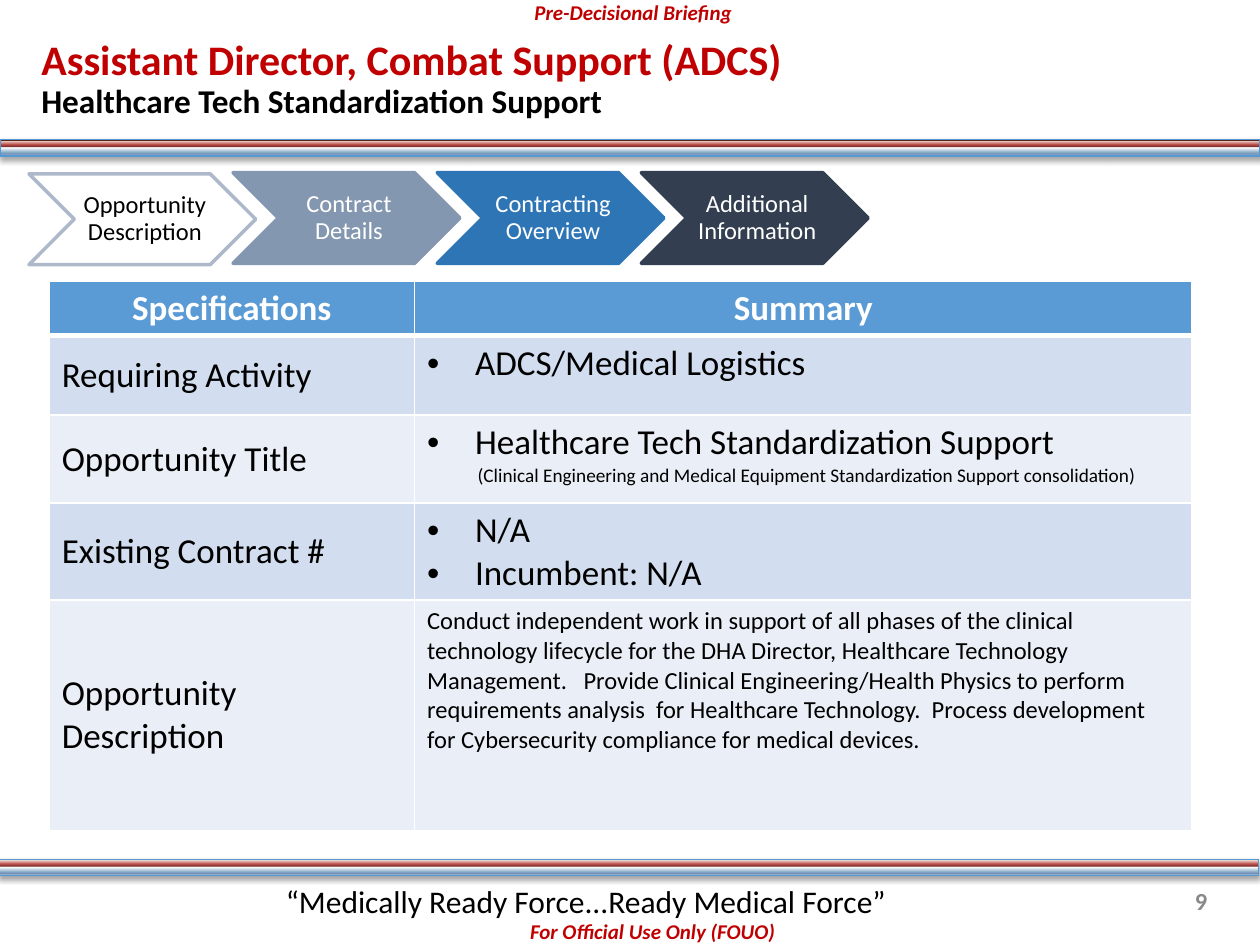
from dataclasses import dataclass
from lxml.etree import SubElement as Sub
from pptx import Presentation
from pptx.dml.color import RGBColor as Rgb
from pptx.enum.shapes import MSO_SHAPE as Shape
from pptx.enum.text import MSO_ANCHOR as Anchor, MSO_AUTO_SIZE as Fit, PP_ALIGN as Align
from pptx.oxml import parse_xml
from pptx.oxml.ns import nsdecls, qn
from pptx.util import Inches, Pt


@dataclass(frozen=True)
class Theme:
    font: str = "Calibri"
    red: str = "C00000"
    black: str = "000000"
    white: str = "FFFFFF"
    gray: str = "898989"
    edge: str = "5698D3"
    head: str = "5B9BD5"
    bands: tuple = ("D2DEEF", "EAEFF7")
    title: int = 24
    sub: int = 19
    cell: int = 20
    motto: int = 18
    body: int = 14
    mark: int = 12
    note: int = 11


T = Theme()


def write(para, text, size, color, bold=False, italic=False):
    run = para.add_run()
    run.text = text
    font = run.font
    font.name, font.size, font.bold, font.italic = T.font, Pt(size), bold, italic
    font.color.rgb = Rgb.from_string(color)


def add_box(shapes, x, y, w, h, align=Align.LEFT, anchor=Anchor.TOP, pads=None):
    """Add a wrapping text box; return its first paragraph and its frame."""
    frame = shapes.add_textbox(Inches(x), Inches(y), Inches(w), Inches(h)).text_frame
    frame.word_wrap = True
    frame.vertical_anchor = anchor
    if pads:
        (frame.margin_left, frame.margin_top,
         frame.margin_right, frame.margin_bottom) = map(Inches, pads)
    para = frame.paragraphs[0]
    para.alignment = align
    return para, frame


deck = Presentation()
deck.slide_width, deck.slide_height = Inches(10), Inches(7.5)
slide = deck.slides.add_slide(deck.slide_layouts[6])
shapes = slide.shapes

# Striped bars
stops = [(0, "DCEBF5"), (8, "83A7C3"), (13, "768FB9"), (21, "83A7C3"), (52, "FFFFFF"),
         (56, "9C6563"), (58, "80302D"), (71, "C0524E"), (94, "EBDAD4"), (100, "55261C")]
marks = "".join(f'<a:gs pos="{pos * 1000}"><a:srgbClr val="{color}"/></a:gs>'
                for pos, color in stops)
for x, y in [(0, 1.11), (-0.01, 6.82)]:
    bar = shapes.add_shape(Shape.RECTANGLE, Inches(x), Inches(y), Inches(10), Inches(0.13))
    bar.line.color.rgb = Rgb.from_string(T.edge)
    bar.line.width = Pt(0.75)
    props = bar._element.spPr
    props.find(qn("a:prstGeom")).addnext(parse_xml(
        f'<a:gradFill {nsdecls("a")} rotWithShape="1"><a:gsLst>{marks}</a:gsLst>'
        '<a:lin ang="16200000" scaled="0"/></a:gradFill>'))
    props.append(parse_xml(
        f'<a:effectLst {nsdecls("a")}><a:outerShdw blurRad="{Pt(3.1)}" dist="{Pt(1.8)}" '
        'dir="5400000" rotWithShape="0"><a:srgbClr val="000000"><a:alpha val="35000"/>'
        '</a:srgbClr></a:outerShdw></a:effectLst>'))

# Security markings
for text, x, y, w in [("For Official Use Only (FOUO)", 2.12, 7.24, 6.12),
                      ("Pre-Decisional Briefing", 4.05, -0.05, 1.95)]:
    para, frame = add_box(shapes, x, y, w, 0.3, Align.CENTER)
    frame.auto_size = Fit.SHAPE_TO_FIT_TEXT
    write(para, text, T.mark, T.red, True, True)

# Title
para, frame = add_box(shapes, 0.23, 0.31, 7.42, 0.8, pads=(0.1, 0, 0.1, 0))
para.line_spacing = 0.9
write(para, "Assistant Director, Combat Support (ADCS)", T.title, T.red, True)
para.add_line_break()
write(para, "Healthcare Tech Standardization Support", T.sub, T.black, True)

# Chevron steps
steps = [("Opportunity Description", T.white, "ADB9CA", T.black),
         ("Contract Details", "8497B0", "8497B0", T.white),
         ("Contracting Overview", "2E75B6", "2E75B6", T.white),
         ("Additional Information", "333F50", "333F50", T.white)]
group = shapes.add_group_shape().shapes
for i, (text, fill, edge, ink) in enumerate(steps):
    x, y = 0.23 + 1.62 * i, 1.37 if i else 1.38
    step = group.add_shape(Shape.CHEVRON, Inches(x), Inches(y), Inches(1.8), Inches(0.72))
    step.shadow.inherit = False
    step.fill.solid()
    step.fill.fore_color.rgb = Rgb.from_string(fill)
    step.line.color.rgb = Rgb.from_string(edge)
    step.line.width = Pt(2)
    para, frame = add_box(group, x + 0.36, y, 1.08, 0.72, Align.CENTER, Anchor.MIDDLE,
                          (0.06, 0.02, 0.02, 0.02))
    para.line_spacing = 0.9
    write(para, text, T.body, ink)

# Table: each summary line is (text, size, left margin, bulleted)
rows = [
    ("Requiring Activity", [("ADCS/Medical Logistics", T.cell, 0.38, True)]),
    ("Opportunity Title", [
        ("Healthcare Tech Standardization Support", T.cell, 0.38, True),
        ("(Clinical Engineering and Medical Equipment Standardization Support consolidation)",
         T.note, 0.4, False)]),
    ("Existing Contract #", [("N/A", T.cell, 0.38, True),
                             ("Incumbent: N/A", T.cell, 0.38, True)]),
    ("Opportunity Description", [
        ("Conduct independent work in support of all phases of the clinical technology "
         "lifecycle for the DHA Director, Healthcare Technology Management.   Provide "
         "Clinical Engineering/Health Physics to perform requirements analysis  for "
         "Healthcare Technology.  Process development for Cybersecurity compliance for "
         "medical devices.", T.body, 0, False)]),
]
table = shapes.add_table(5, 2, Inches(0.39), Inches(2.23), Inches(9.07), Inches(4.26)).table
for col, w in zip(table.columns, (2.9, 6.17)):
    col.width = Inches(w)
for row, h in zip(table.rows, (0.4, 0.63, 0.7, 0.7, 1.83)):
    row.height = Inches(h)

for c, text in enumerate(("Specifications", "Summary")):
    para = table.cell(0, c).text_frame.paragraphs[0]
    para.alignment = Align.CENTER
    write(para, text, T.cell, T.white, True)
for r, (label, lines) in enumerate(rows, 1):
    write(table.cell(r, 0).text_frame.paragraphs[0], label, T.cell, T.black)
    frame = table.cell(r, 1).text_frame
    for n, (text, size, left, dot) in enumerate(lines):
        para = frame.add_paragraph() if n else frame.paragraphs[0]
        props = para._p.get_or_add_pPr()
        props.set("marL", str(Inches(left)))
        props.set("indent", str(Inches(-left if dot else 0)))
        if dot:
            Sub(props, qn("a:buFont"), typeface="Arial")
            Sub(props, qn("a:buChar"), char="•")
        write(para, text, size, T.black)

for r in range(5):
    for c in range(2):
        cell = table.cell(r, c)
        cell.vertical_anchor = Anchor.TOP if r and c else Anchor.MIDDLE
        props = cell._tc.get_or_add_tcPr()
        for side in ("lnL", "lnR", "lnT", "lnB"):
            thick = (r, side) in ((0, "lnB"), (1, "lnT"))
            line = Sub(props, qn("a:" + side), w=str(Pt(3 if thick else 1)))
            Sub(Sub(line, qn("a:solidFill")), qn("a:srgbClr"), val=T.white)
        cell.fill.solid()
        cell.fill.fore_color.rgb = Rgb.from_string(T.bands[(r - 1) % 2] if r else T.head)

# Footer
para, frame = add_box(shapes, 2.17, 6.95, 5.75, 0.4)
write(para, "“Medically Ready Force...Ready Medical Force”", T.motto, T.black)
para, frame = add_box(shapes, 9.01, 6.95, 0.67, 0.4, Align.RIGHT, Anchor.MIDDLE)
write(para, "9", T.body, T.gray, True)

deck.save("out.pptx")
